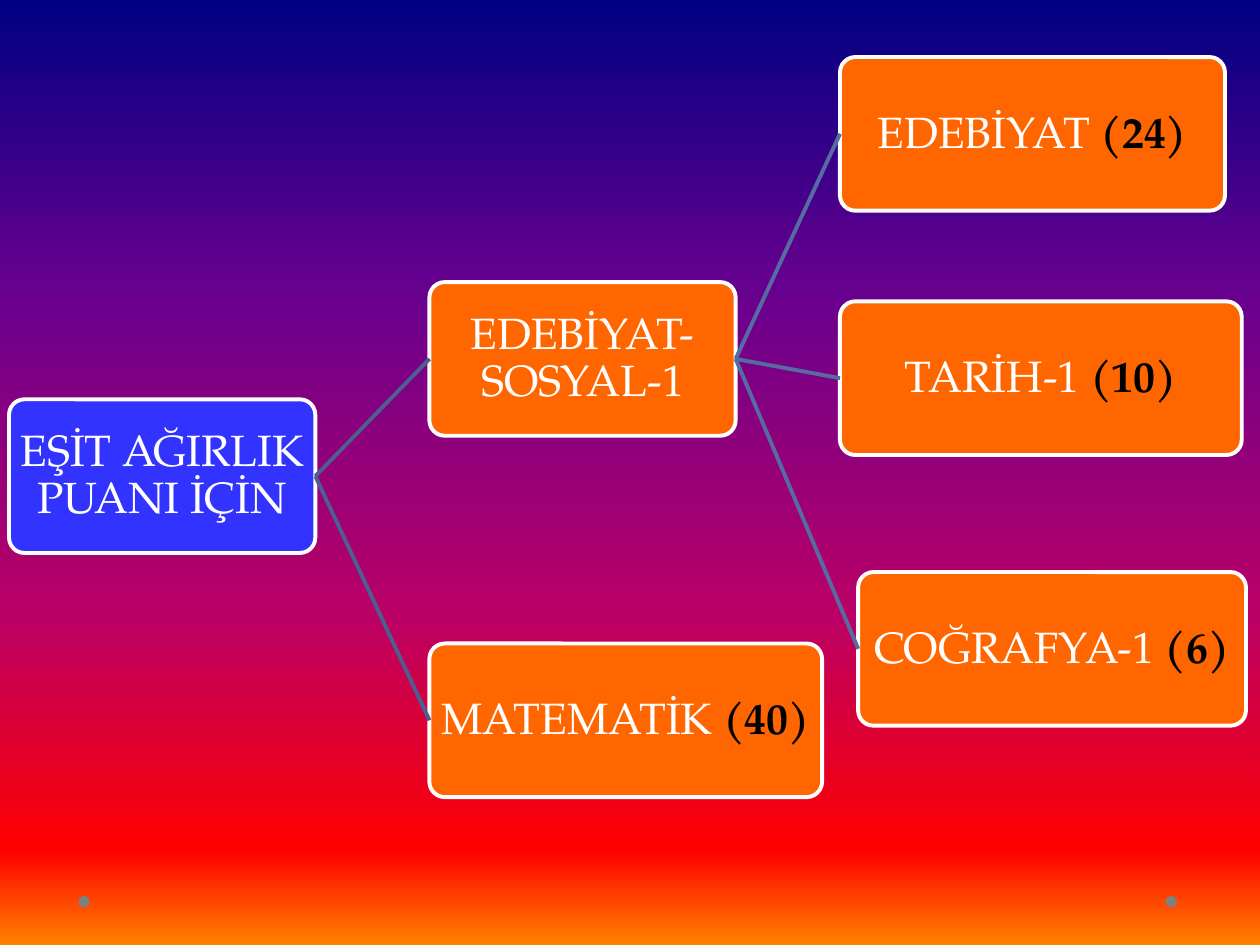
"""Builds a one-slide tree of the tests behind the equal-weight score."""
from pptx import Presentation
from pptx.dml.color import RGBColor
from pptx.enum.shapes import MSO_CONNECTOR as Connector, MSO_SHAPE as Shape
from pptx.enum.text import MSO_ANCHOR as Anchor, PP_ALIGN as Align
from pptx.oxml import parse_xml
from pptx.oxml.ns import nsdecls, qn
from pptx.util import Pt
from lxml.etree import SubElement

WHITE = RGBColor(0xFF, 0xFF, 0xFF)
BLACK = RGBColor(0x00, 0x00, 0x00)
BLUE = RGBColor(0x33, 0x33, 0xFF)
ORANGE = RGBColor(0xFF, 0x66, 0x00)
GRAY = RGBColor(0x80, 0x80, 0x80)
ROOT_LINK = RGBColor(0x4D, 0x5E, 0x90)
BRANCH_LINK = RGBColor(0x57, 0x6B, 0xA3)
BACKGROUND_STOPS = [
    (0, RGBColor(0x00, 0x00, 0x82)),
    (30, RGBColor(0x66, 0x00, 0x8F)),
    (65, RGBColor(0xBA, 0x00, 0x66)),
    (90, RGBColor(0xFF, 0x00, 0x00)),
    (100, RGBColor(0xFF, 0x82, 0x00)),
]
FONT = "TeX Gyre Pagella"
BOX_WIDTH, BOX_HEIGHT = 175, 87.8
LEFT_RIGHT_SITES = (3, 1)


def set_background(slide):
    stops = "".join(
        f'<a:gs pos="{percent * 1000}"><a:srgbClr val="{color}"/></a:gs>'
        for percent, color in BACKGROUND_STOPS
    )
    background = parse_xml(
        f'<p:bg {nsdecls("p", "a")}><p:bgPr><a:gradFill rotWithShape="1">'
        f'<a:gsLst>{stops}</a:gsLst><a:lin ang="5400000" scaled="0"/>'
        "</a:gradFill><a:effectLst/></p:bgPr></p:bg>"
    )
    slide.element.cSld.insert(0, background)


def add_dot(slide, left):
    dot = slide.shapes.add_shape(Shape.OVAL, Pt(left), Pt(512), Pt(6.5), Pt(6.5))
    dot.shadow.inherit = False
    dot.fill.solid()
    dot.fill.fore_color.rgb = GRAY
    dot.line.fill.background()


def add_span(para, text, color, bold=False):
    span = para.add_run()
    span.text = text
    span.font.name = FONT
    span.font.size = Pt(25)
    span.font.bold = bold
    span.font.color.rgb = color


def add_box(slide, left, top, name, count="", width=BOX_WIDTH, color=ORANGE):
    box = slide.shapes.add_shape(
        Shape.ROUNDED_RECTANGLE, Pt(left), Pt(top), Pt(width), Pt(BOX_HEIGHT)
    )
    box.adjustments[0] = 0.1
    box.shadow.inherit = False
    box.fill.solid()
    box.fill.fore_color.rgb = color
    box.line.color.rgb = WHITE
    box.line.width = Pt(2.25)
    frame = box.text_frame
    frame.word_wrap = True
    frame.vertical_anchor = Anchor.MIDDLE
    frame.margin_left = frame.margin_right = Pt(1.25)
    frame.margin_top = frame.margin_bottom = Pt(1.25)
    para = frame.paragraphs[0]
    para.alignment = Align.CENTER
    para.line_spacing = 0.9
    add_span(para, name, WHITE)
    if count:
        add_span(para, count, BLACK, bold=True)
    return box


def link(slide, parent, child, color):
    line = slide.shapes.add_connector(Connector.STRAIGHT, 0, 0, 0, 0)
    parent_site, child_site = LEFT_RIGHT_SITES
    line.begin_connect(parent, parent_site)
    line.end_connect(child, child_site)
    line.line.color.rgb = color
    line.line.width = Pt(2.25)
    SubElement(line.element.spPr, qn("a:effectLst"))


def main():
    deck = Presentation()
    deck.slide_width, deck.slide_height = Pt(720), Pt(540)
    page = deck.slides.add_slide(deck.slide_layouts[6])
    set_background(page)
    for left in (666, 44.75):
        add_dot(page, left)

    score = add_box(page, 5.2, 228.2, "EŞİT AĞIRLIK PUANI İÇİN", color=BLUE)
    social = add_box(page, 245.4, 161.2, "EDEBİYAT-SOSYAL-1")
    math = add_box(page, 245.4, 367.7, "MATEMATİK ", "(40)", 224.4)
    subjects = [
        add_box(page, 480, 32.6, "EDEBİYAT ", "(24)", 220),
        add_box(page, 480, 172.2, "TARİH-1 ", "(10)", 229.6),
        add_box(page, 490.4, 326.9, "COĞRAFYA-1 ", "(6)", 221.6),
    ]
    for test in (social, math):
        link(page, score, test, ROOT_LINK)
    for subject in subjects:
        link(page, social, subject, BRANCH_LINK)
    deck.save("out.pptx")


if __name__ == "__main__":
    main()
